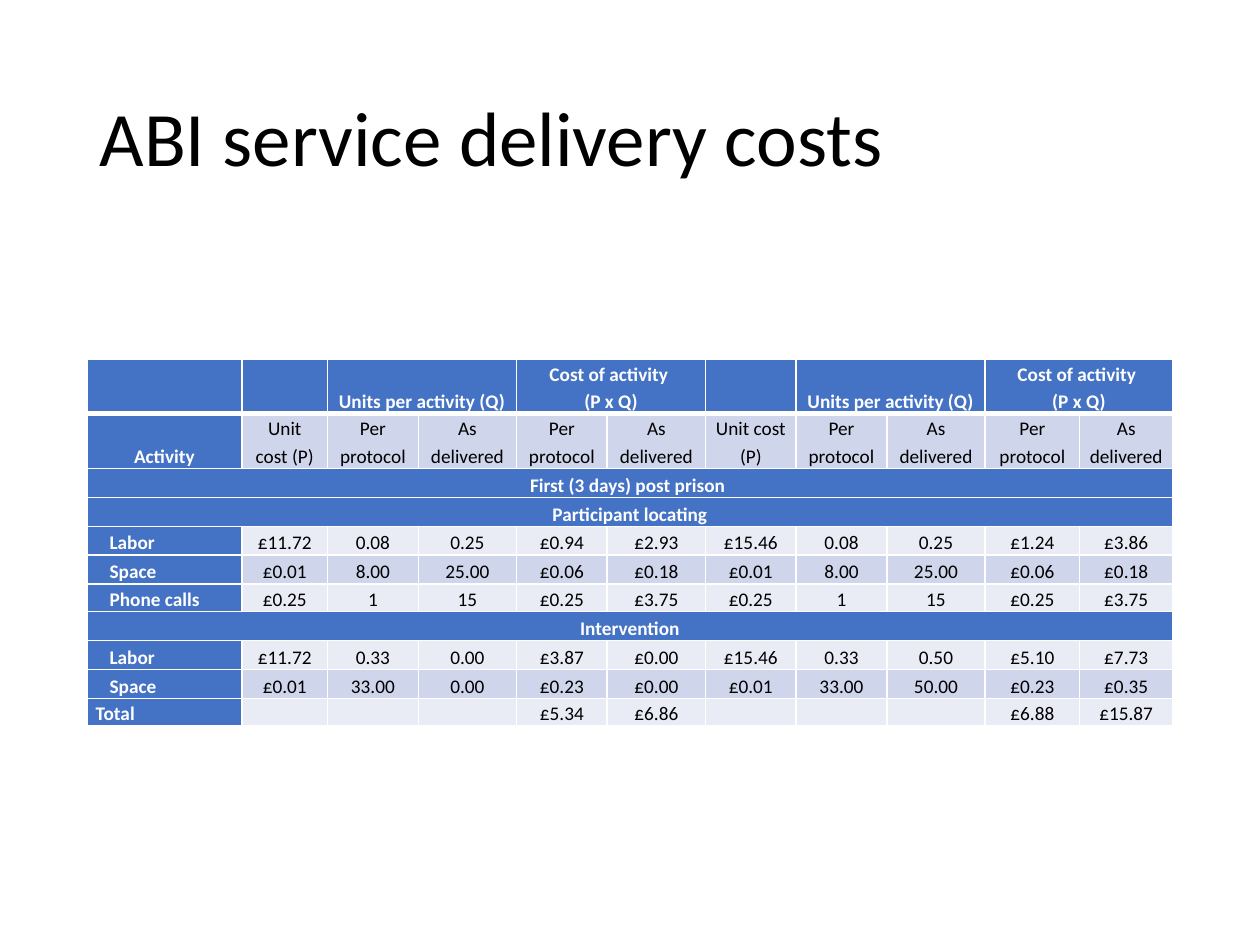
import copy

import pptx
import pptx.dml.color
import pptx.enum.text
import pptx.oxml
import pptx.oxml.ns
import pptx.util
from pptx.util import Inches

COLORS = {
    "black": "000000", "white": "FFFFFF", "header": "4472C4",
    "dark_band": "CFD5EA", "light_band": "E9EBF5",
}
FONT = "Calibri"
ALIGN = pptx.enum.text.PP_ALIGN
ANCHOR = pptx.enum.text.MSO_ANCHOR

COLUMN_WIDTHS = [1.23, 0.68, 0.72, 0.78, 0.72, 0.78, 0.72, 0.72, 0.78, 0.75, 0.74]
ROW_HEIGHTS = [0.42, 0.42, 0.23, 0.23, 0.23, 0.23, 0.21, 0.23, 0.23, 0.23, 0.21]
GROUP_HEADINGS = ["", "Units per activity (Q)", "", "Cost of activity \v(P x Q)", ""]
MEASURES = ["Unit cost (P)"] + ["Per protocol", "As delivered"] * 2
COST_ROWS = [
    [""] + GROUP_HEADINGS * 2,
    ["Activity"] + MEASURES * 2,
    ["First (3 days) post prison\u00a0"],
    ["Participant locating"],
    ["Labor", "£11.72", "0.08", "0.25", "£0.94", "£2.93",
     "£15.46", "0.08", "0.25", "£1.24", "£3.86"],
    ["Space"] + ["£0.01", "8.00", "25.00", "£0.06", "£0.18"] * 2,
    ["Phone calls"] + ["£0.25", "1", "15", "£0.25", "£3.75"] * 2,
    ["Intervention"],
    ["Labor", "£11.72", "0.33", "0.00", "£3.87", "£0.00",
     "£15.46", "0.33", "0.50", "£5.10", "£7.73"],
    ["Space", "£0.01", "33.00", "0.00", "£0.23", "£0.00",
     "£0.01", "33.00", "50.00", "£0.23", "£0.35"],
    ["Total", "", "", "", "£5.34", "£6.86", "", "", "", "£6.88", "£15.87"],
]
DARK_ROWS = {1, 5, 9}
INDENTED = {"Labor", "Space", "Phone calls"}


def rgb(name):
    """Return the named palette colour."""
    return pptx.dml.color.RGBColor.from_string(COLORS[name])


def write_text(frame, text, size, color="black", bold=False,
               align=ALIGN.LEFT, spacing=1.0, indent=0):
    """Write one formatted paragraph into a text frame."""
    paragraph = frame.paragraphs[0]
    paragraph.text = text
    paragraph.alignment = align
    paragraph.line_spacing = spacing
    if indent:
        paragraph._p.get_or_add_pPr().set("marL", str(Inches(indent)))
    for run in paragraph.runs:
        run.font.name = FONT
        run.font.size = pptx.util.Pt(size)
        run.font.bold = bold
        run.font.color.rgb = rgb(color)
    for line_break in paragraph._p.findall(pptx.oxml.ns.qn("a:br")):
        line_break.append(copy.deepcopy(paragraph.runs[0]._r.rPr))
    if not text:
        paragraph._p.append(pptx.oxml.parse_xml(
            f'<a:endParaRPr {pptx.oxml.ns.nsdecls("a")} sz="{size * 100}"/>'))


def set_borders(cell, top=1, bottom=1):
    """Rule a cell in white, with the given top and bottom widths in points."""
    widths = {"lnL": 1, "lnR": 1, "lnT": top, "lnB": bottom}
    for position, (side, width) in enumerate(widths.items()):
        cell._tc.get_or_add_tcPr().insert(position, pptx.oxml.parse_xml(
            f'<a:{side} {pptx.oxml.ns.nsdecls("a")} w="{pptx.util.Pt(width)}">'
            f'<a:solidFill><a:srgbClr val="{COLORS["white"]}"/></a:solidFill></a:{side}>'))


def add_title(slide, left, top, width, height):
    """Place and format the slide title."""
    title = slide.shapes.title
    title.left, title.top, title.width, title.height = left, top, width, height
    title.text_frame.vertical_anchor = ANCHOR.MIDDLE
    write_text(title.text_frame, "ABI service delivery costs", 44, spacing=0.9)


def add_cost_table(slide, left, top, width, height):
    """Build the table of unit costs, quantities and activity costs."""
    table = slide.shapes.add_table(
        len(ROW_HEIGHTS), len(COLUMN_WIDTHS), left, top, width, height).table
    table.horz_banding = False
    for column, column_width in zip(table.columns, COLUMN_WIDTHS):
        column.width = Inches(column_width)
    last_column = len(COLUMN_WIDTHS) - 1

    for row, (row_height, values) in enumerate(zip(ROW_HEIGHTS, COST_ROWS)):
        table.rows[row].height = Inches(row_height)
        is_section = len(values) == 1
        values = values + [""] * (last_column + 1 - len(values))
        band = "dark_band" if row in DARK_ROWS else "light_band"
        for column, text in enumerate(values):
            cell = table.cell(row, column)
            is_header = row == 0 or column == 0 or is_section
            is_label = column == 0 and (text in INDENTED or text == "Total")
            cell.margin_left = cell.margin_right = Inches(0.07)
            cell.margin_top = cell.margin_bottom = 0
            cell.vertical_anchor = ANCHOR.BOTTOM
            cell.fill.solid()
            cell.fill.fore_color.rgb = rgb("header" if is_header else band)
            set_borders(cell, top=3 if row == 1 else 1, bottom=3 if row == 0 else 1)
            write_text(cell.text_frame, text, 11,
                       color="white" if is_header else "black", bold=is_header,
                       align=ALIGN.LEFT if is_label else ALIGN.CENTER,
                       spacing=1.15, indent=0.11 if text in INDENTED else 0)
        if is_section:
            table.cell(row, 0).merge(table.cell(row, last_column))

    for column in (2, 4, 7, 9):
        table.cell(0, column).merge(table.cell(0, column + 1))


def main():
    """Create the presentation and save it."""
    presentation = pptx.Presentation()
    presentation.slide_width, presentation.slide_height = Inches(10), Inches(7.5)
    slide = presentation.slides.add_slide(presentation.slide_layouts[5])
    add_title(slide, Inches(0.69), Inches(0.4), Inches(8.62), Inches(1.45))
    add_cost_table(slide, Inches(0.69), Inches(2.85), Inches(8.62), Inches(2.86))
    presentation.save("out.pptx")


if __name__ == "__main__":
    main()
